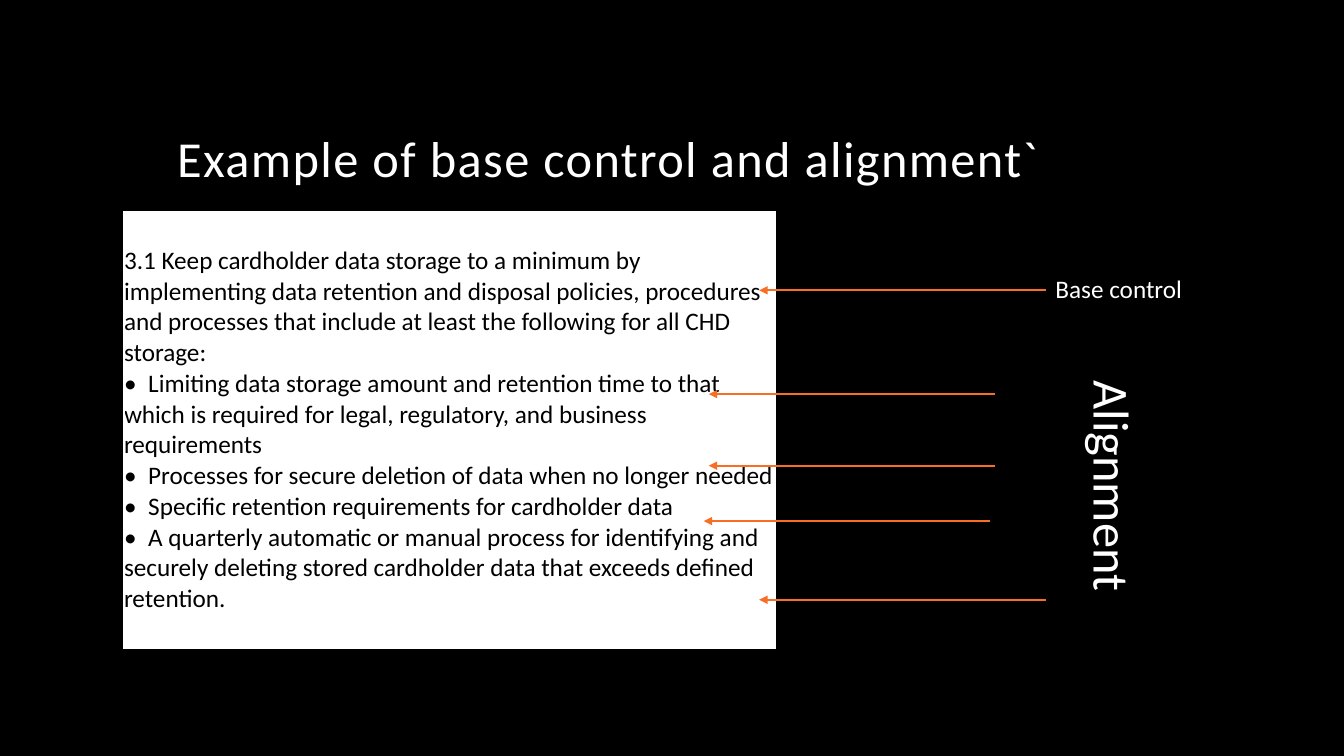
import pptx
import pptx.dml.color
import pptx.enum.shapes
import pptx.enum.text
import pptx.util
import lxml.etree
from dataclasses import dataclass
from pptx.oxml.ns import qn

Inches = pptx.util.Inches
Pt = pptx.util.Pt


@dataclass(frozen=True)
class Theme:
    font: str = "Calibri"
    background: str = "000000"
    light: str = "FFFFFF"
    dark: str = "000000"
    arrow: str = "F86E24"
    heading_size: int = 36
    body_size: int = 18
    arrow_width: float = 1.5


THEME = Theme()

TITLE = "Example of base control and alignment`"
BASE_CONTROL = (
    "3.1 Keep cardholder data storage to a minimum by implementing data retention "
    "and disposal policies, procedures and processes that include at least the "
    "following for all CHD storage:"
)
ALIGNED_CONTROLS = [
    "Limiting data storage amount and retention time to that which is required "
    "for legal, regulatory, and business requirements",
    "Processes for secure deletion of data when no longer needed",
    "Specific retention requirements for cardholder data",
    "A quarterly automatic or manual process for identifying and securely "
    "deleting stored cardholder data that exceeds defined retention.",
]
CONTROL_BOX = (1.23, 2.1, 6.46, 4.33)
BULLET_GAP = 0.24
ARROW_LENGTH = 2.84
ARROW_TIPS = [(7.53, 2.88), (7.03, 3.91), (7.03, 4.62), (6.98, 5.17), (7.53, 5.95)]


def color(value):
    return pptx.dml.color.RGBColor.from_string(value)


def style_paragraph(paragraph, size, font_color):
    for run in paragraph.runs:
        run.font.name = THEME.font
        run.font.size = Pt(size)
        run.font.color.rgb = color(font_color)


def add_label(slide, text, box, size, rotation=0):
    shape = slide.shapes.add_textbox(*map(Inches, box))
    shape.rotation = rotation
    shape.text_frame.word_wrap = True
    shape.text_frame.text = text
    style_paragraph(shape.text_frame.paragraphs[0], size, THEME.light)
    return shape


def add_title(slide):
    frame = add_label(slide, TITLE, (1.66, 0.42, 10, 1.5), THEME.heading_size).text_frame
    frame.vertical_anchor = pptx.enum.text.MSO_ANCHOR.BOTTOM
    paragraph = frame.paragraphs[0]
    paragraph.line_spacing = 0.9
    paragraph.runs[0].font._element.set("spc", "100")


def add_control_table(slide):
    table = slide.shapes.add_table(1, 1, *map(Inches, CONTROL_BOX)).table
    table.first_row = False
    table.horz_banding = False
    cell = table.cell(0, 0)
    cell.fill.solid()
    cell.fill.fore_color.rgb = color(THEME.light)
    cell.vertical_anchor = pptx.enum.text.MSO_ANCHOR.MIDDLE
    cell.margin_left = cell.margin_right = cell.margin_top = cell.margin_bottom = 0
    frame = cell.text_frame
    frame.text = BASE_CONTROL
    for control in ALIGNED_CONTROLS:
        paragraph = frame.add_paragraph()
        paragraph.text = "•\t" + control
        properties = paragraph._p.get_or_add_pPr()
        tabs = lxml.etree.SubElement(properties, qn("a:tabLst"))
        lxml.etree.SubElement(tabs, qn("a:tab"), pos=str(Inches(BULLET_GAP)), algn="l")
    for paragraph in frame.paragraphs:
        style_paragraph(paragraph, THEME.body_size, THEME.dark)


def add_arrow(slide, tip_x, y):
    connector = slide.shapes.add_connector(
        pptx.enum.shapes.MSO_CONNECTOR.STRAIGHT,
        Inches(tip_x + ARROW_LENGTH), Inches(y), Inches(tip_x), Inches(y),
    )
    connector.line.color.rgb = color(THEME.arrow)
    connector.line.width = Pt(THEME.arrow_width)
    lxml.etree.SubElement(connector.line._get_or_add_ln(), qn("a:tailEnd"), type="triangle")
    lxml.etree.SubElement(connector._element.spPr, qn("a:effectLst"))


def main():
    presentation = pptx.Presentation()
    presentation.slide_width = Inches(13.33)
    presentation.slide_height = Inches(7.5)
    slide = presentation.slides.add_slide(presentation.slide_layouts[6])
    slide.background.fill.solid()
    slide.background.fill.fore_color.rgb = color(THEME.background)

    add_title(slide)
    add_control_table(slide)
    for tip_x, y in ARROW_TIPS:
        add_arrow(slide, tip_x, y)
    add_label(slide, "Alignment", (9.39, 4.97, 3.3, 0.71), THEME.heading_size, rotation=90)
    add_label(slide, "Base control", (10.37, 2.66, 2.36, 0.4), THEME.body_size)

    presentation.save("out.pptx")


if __name__ == "__main__":
    main()
